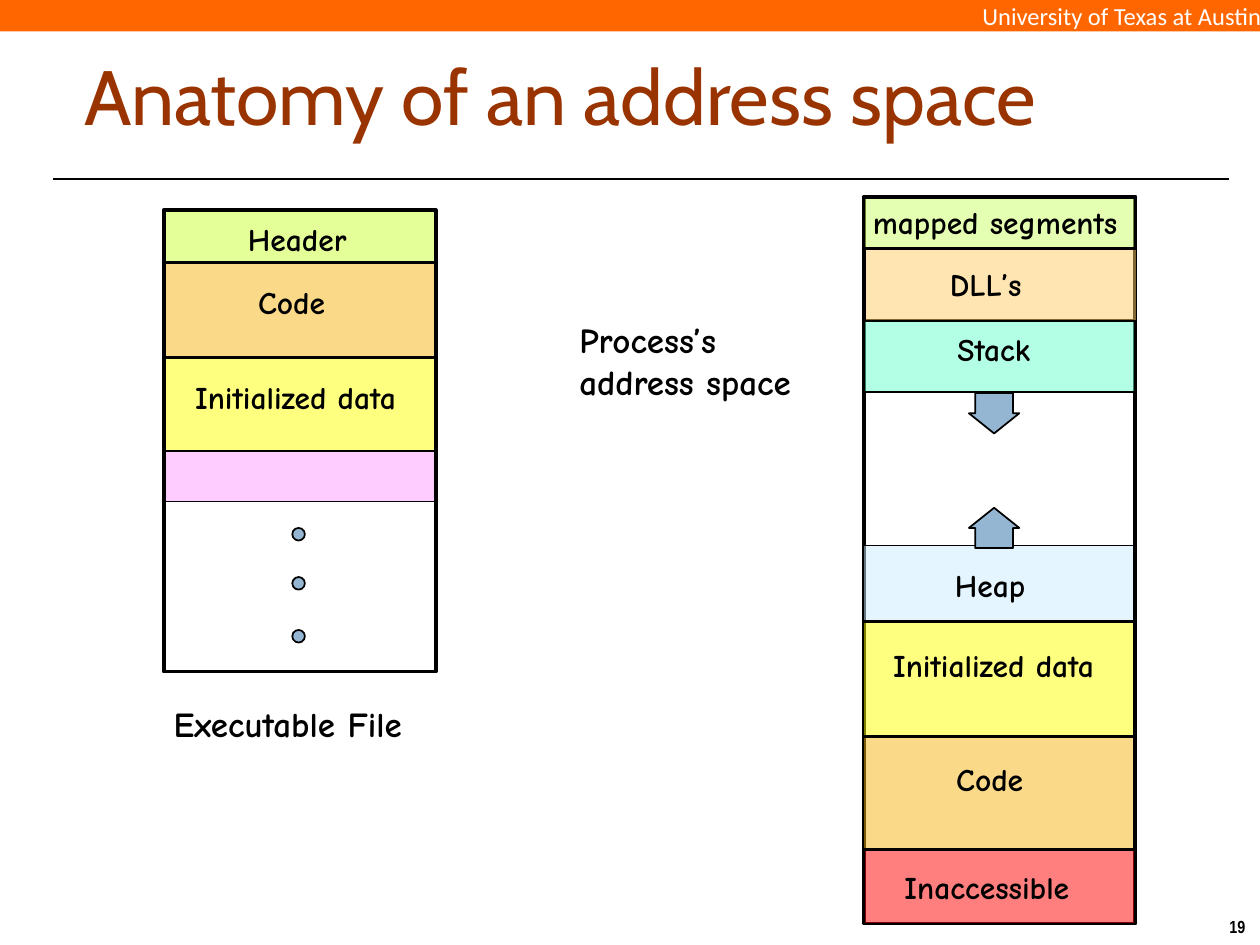
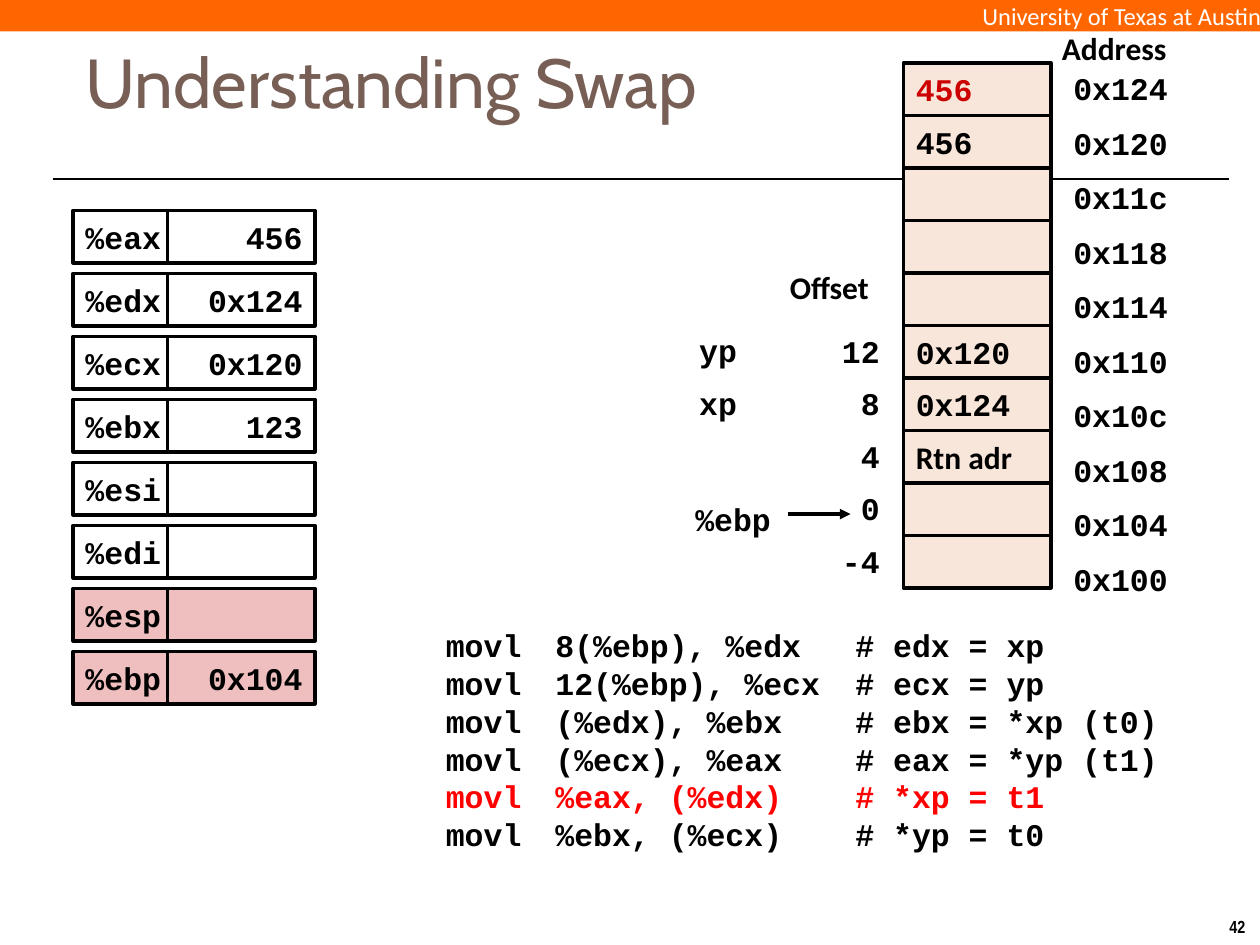
import lxml.etree
import pptx
import pptx.dml.color
import pptx.enum.shapes
import pptx.enum.text
import pptx.oxml.ns
import pptx.util

Inches = pptx.util.Inches
Pt = pptx.util.Pt
qn = pptx.oxml.ns.qn
SHAPE = pptx.enum.shapes.MSO_SHAPE
ALIGN = pptx.enum.text.PP_ALIGN
ANCHOR = pptx.enum.text.MSO_ANCHOR
STRAIGHT = pptx.enum.shapes.MSO_CONNECTOR.STRAIGHT

COLORS = {
    "black": "000000", "white": "FFFFFF", "orange": "FF6600",
    "rust": "993300", "brown": "775F55", "marker": "94B6D2",
    "header": "CCFF33", "code": "F7B615", "data": "FFFF00",
    "pink": "FFCCFF", "heap": "CCECFF", "stack": "66FFCC",
    "dll": "FFCC66", "mapped": "CCFF66", "inaccessible": "FF0000",
    "cell": "F8E6DA", "pointer": "EFBFBF", "changed": "CC0000",
    "red": "FF0000",
}
COMIC, COURIER, CALIBRI = "Comic Neue", "Courier New", "Calibri"


def add_text(slide, text, at, font, size=18, color="black", bold=True,
             align=ALIGN.LEFT, anchor=ANCHOR.TOP, wrap=False, sp=None):
    if sp is None:
        sp = slide.shapes.add_textbox(*[Inches(v) for v in at])
    tf = sp.text_frame
    tf.word_wrap = wrap
    tf.vertical_anchor = anchor
    tf.text = text
    for p in tf.paragraphs:
        p.alignment = align
        p.font.name = font
        p.font.size = Pt(size)
        p.font.bold = bold
        p.font.color.rgb = pptx.dml.color.RGBColor.from_string(COLORS[color])
    return sp


def add_box(slide, at, fill=None, line=1, alpha=100, kind=SHAPE.RECTANGLE):
    sp = slide.shapes.add_shape(kind, *[Inches(v) for v in at])
    sp.shadow.inherit = False
    if fill:
        sp.fill.solid()
        sp.fill.fore_color.rgb = pptx.dml.color.RGBColor.from_string(COLORS[fill])
        if alpha < 100:
            clr = sp._element.spPr.find(qn("a:solidFill"))[0]
            lxml.etree.SubElement(clr, qn("a:alpha"), val=str(alpha * 1000))
    else:
        sp.fill.background()
    if line:
        sp.line.color.rgb = pptx.dml.color.RGBColor.from_string(COLORS["black"])
        sp.line.width = Pt(line)
    else:
        sp.line.fill.background()
    return sp


prs = pptx.Presentation()
prs.slide_width = Inches(10)
prs.slide_height = Inches(7.5)

pages = [
    ("Anatomy of an address space", (0.57, 0.33, 8.01, 0.85), 44, "rust", "19", []),
    ("Understanding Swap", (0.58, 0.33, 6.97, 0.63), 39.6, "brown", "42",
     [(6.25, 4.08, 6.75, 4.08, 2)]),
]
slides = []
for title, at, size, color, number, arrows in pages:
    s = prs.slides.add_slide(prs.slide_layouts[6])
    slides.append(s)
    bar = add_box(s, (0, 0, 10.01, 0.25), "orange", line=0)
    add_text(s, "University of Texas at Austin", None, CALIBRI, 14, "white", False,
             ALIGN.RIGHT, ANCHOR.MIDDLE, sp=bar)
    tf = bar.text_frame
    tf.margin_left = tf.margin_top = tf.margin_right = tf.margin_bottom = 0
    for x1, y1, x2, y2, width in [(0.42, 1.42, 9.75, 1.42, 1.5)] + arrows:
        cx = s.shapes.add_connector(STRAIGHT, Inches(x1), Inches(y1), Inches(x2), Inches(y2))
        cx.line.color.rgb = pptx.dml.color.RGBColor.from_string(COLORS["black"])
        cx.line.width = Pt(width)
        if (x1, y1, x2, y2, width) in arrows:
            ln = cx._element.spPr.find(qn("a:ln"))
            lxml.etree.SubElement(ln, qn("a:tailEnd"), type="triangle")
        lxml.etree.SubElement(cx._element.spPr, qn("a:effectLst"))
    add_text(s, number, (9.66, 7.22, 0.34, 0.27), "Arial Narrow", 10)
    add_text(s, title, at, "Cabin", size, color, False, anchor=ANCHOR.MIDDLE, wrap=True)

s = slides[0]
add_box(s, (6.86, 1.56, 2.15, 5.77), line=2.25)
segments = [
    (1.31, 2.09, 0.74, "code", 50, "Code", 1.95, 2.2, 0.77),
    (1.31, 1.68, 0.4, "header", 50, "Header", 1.87, 1.7, 1.06),
    (1.31, 2.84, 0.74, "data", 50, "Initialized data", 1.45, 2.95, 2.01),
    (1.3, 3.58, 0.4, "pink", 100, "", 0, 0, 0),
    (6.85, 5.85, 0.89, "code", 50, "Code", 7.49, 5.98, 0.77),
    (6.85, 4.94, 0.9, "data", 50, "Initialized data", 6.99, 5.08, 2.01),
    (6.85, 4.33, 0.6, "heap", 50, "Heap", 7.48, 4.44, 0.79),
    (6.86, 2.54, 0.57, "stack", 50, "Stack", 7.5, 2.57, 0.89),
    (6.87, 1.98, 0.57, "dll", 50, "DLL’s", 7.44, 2.05, 0.82),
    (6.86, 1.57, 0.4, "mapped", 50, "mapped segments", 6.83, 1.56, 2.24),
    (6.86, 6.75, 0.58, "inaccessible", 50, "Inaccessible", 7.08, 6.84, 1.69),
]
for left, top, height, fill, alpha, label, label_left, label_top, label_width in segments:
    add_box(s, (left, top, 2.15, height), fill, alpha=alpha)
    if label:
        add_text(s, label, (label_left, label_top, label_width, 0.45), COMIC)
add_box(s, (1.3, 1.67, 2.16, 3.66), line=2.25)
for top in (4.19, 4.58, 5):
    add_box(s, (2.32, top, 0.1, 0.1), "marker", kind=SHAPE.OVAL)
for kind, top in ((SHAPE.DOWN_ARROW, 3.12), (SHAPE.UP_ARROW, 4.03)):
    arrow = add_box(s, (7.69, top, 0.4, 0.32), "marker", kind=kind)
    arrow.adjustments[0] = 0.75
    arrow.adjustments[1] = 0.5
add_text(s, "Executable File", (1.28, 5.53, 2.2, 0.49), COMIC, 20)
add_text(s, "Process’s\naddress space", (4.5, 2.48, 2.03, 0.88), COMIC, 20)

s = slides[1]
row_height = 5 / 12
stack = [
    ("456", "0x124", ""), ("456", "0x120", ""), ("", "0x11c", ""),
    ("", "0x118", ""), ("", "0x114", ""), ("0x120", "0x110", "12"),
    ("0x124", "0x10c", "8"), ("Rtn adr", "0x108", "4"),
    ("", "0x104", "0"), ("", "0x100", "-4"),
]
for i, (value, address, offset) in enumerate(stack):
    top = 0.5 + i * row_height
    cell = add_box(s, (7.17, top, 1.17, row_height), "cell", 2)
    if value:
        add_text(s, value, None, CALIBRI if value == "Rtn adr" else COURIER,
                 color="changed" if i == 0 else "black", anchor=ANCHOR.MIDDLE, sp=cell)
    add_text(s, address, (8.42, 0.5 + i * 0.4325, 1.33, 0.4), COURIER, wrap=True)
    if offset:
        add_text(s, offset, (6.48, top, 0.6, 0.4), COURIER, align=ALIGN.RIGHT, wrap=True)

add_text(s, "Address", (8.33, 0.18, 1.04, 0.4), CALIBRI)
add_text(s, "Offset", (6.17, 2.08, 0.84, 0.4), CALIBRI)
add_text(s, "%ebp", (5.42, 3.92, 0.8, 0.4), COURIER)
for name, top in (("yp", 2.58), ("xp", 3)):
    add_text(s, name, (5.45, top, 0.72, 0.4), COURIER)

registers = [
    ("%eax", "456"), ("%edx", "0x124"), ("%ecx", "0x120"), ("%ebx", "123"),
    ("%esi", ""), ("%edi", ""), ("%esp", ""), ("%ebp", "0x104"),
]
for i, (name, value) in enumerate(registers):
    top = 1.67 + i * 0.5
    fill = "pointer" if name in ("%esp", "%ebp") else "white"
    name_box = add_box(s, (0.58, top, 0.75, row_height), fill, 2)
    add_text(s, name, None, COURIER, anchor=ANCHOR.MIDDLE, sp=name_box)
    value_box = add_box(s, (1.33, top, 1.17, row_height), fill, 2)
    if value:
        add_text(s, value, None, COURIER, align=ALIGN.RIGHT, anchor=ANCHOR.MIDDLE, sp=value_box)

code = [
    ("8(%ebp), %edx", "edx = xp"),
    ("12(%ebp), %ecx", "ecx = yp"),
    ("(%edx), %ebx", "ebx = *xp (t0)"),
    ("(%ecx), %eax", "eax = *yp (t1)"),
    ("%eax, (%edx)", "*xp = t1"),
    ("%ebx, (%ecx)", "*yp = t0"),
]
lines = [f"\tmovl\t{operands}\t# {note}" for operands, note in code]
listing = add_text(s, "\n".join(lines), (3, 4.92, 6.5, 1.92), COURIER, wrap=True)
for p in listing.text_frame.paragraphs:
    p.line_spacing = Pt(21.6)
    tabs = lxml.etree.Element(qn("a:tabLst"))
    for pos in (0.44, 1.31, 3.69):
        lxml.etree.SubElement(tabs, qn("a:tab"), pos=str(Inches(pos)), algn="l")
    p._p.get_or_add_pPr().insert(1, tabs)
current = listing.text_frame.paragraphs[4]
current.font.color.rgb = pptx.dml.color.RGBColor.from_string(COLORS["red"])

prs.save("out.pptx")
